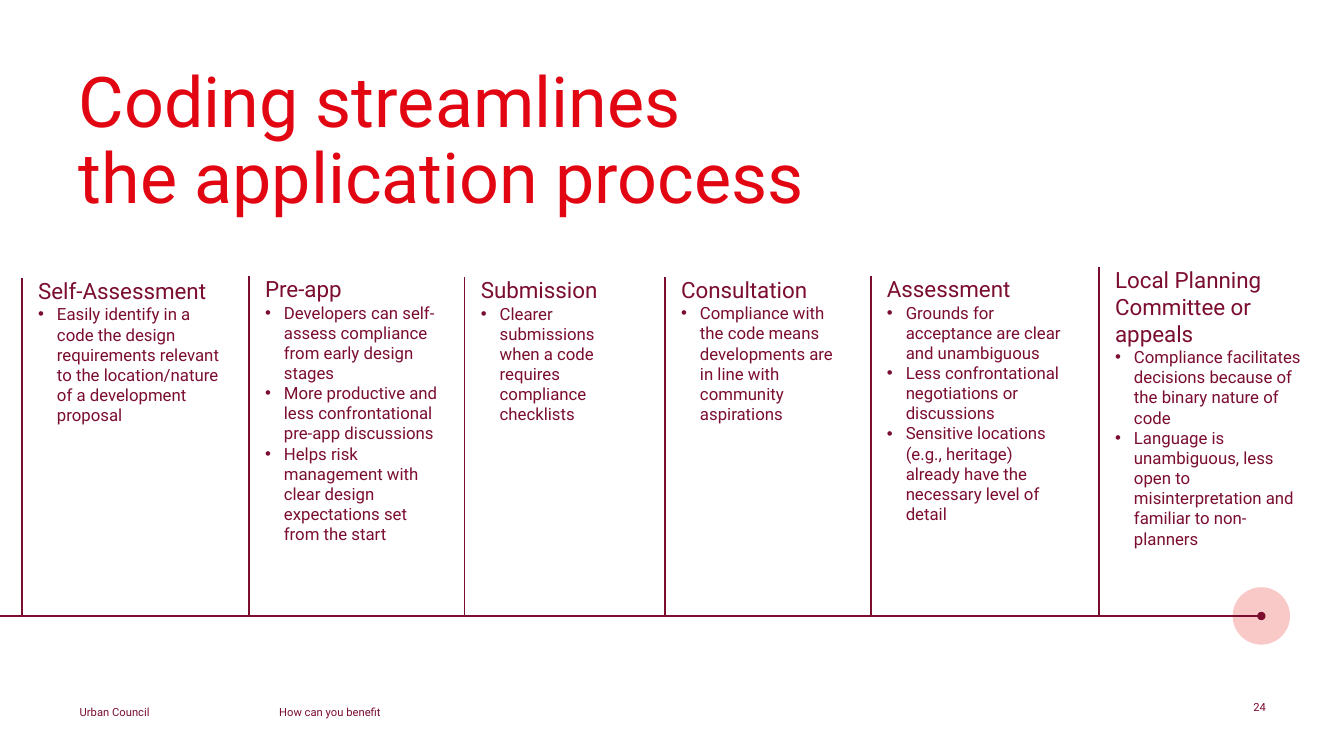
from lxml import etree
from pptx import Presentation
from pptx.dml.color import RGBColor
from pptx.enum.shapes import MSO_CONNECTOR, MSO_SHAPE
from pptx.enum.text import MSO_ANCHOR, PP_ALIGN
from pptx.oxml.ns import qn
from pptx.util import Pt

STRAIGHT = MSO_CONNECTOR.STRAIGHT
OVAL = MSO_SHAPE.OVAL
TOP = MSO_ANCHOR.TOP
LEFT, RIGHT = PP_ALIGN.LEFT, PP_ALIGN.RIGHT

COLORS = {"title": "E20512", "wine": "7B0D2F", "halo": "F8C9C7"}
TIMELINE_Y = 440
RULE_GAP = 2.9

STAGES = [
    (18.7, 198, 147.6, "Self-Assessment", [
        "Easily identify in a code the design requirements relevant to the "
        "location/nature of a development proposal"]),
    (180.8, 196.7, 140.4, "Pre-app", [
        "Developers can self-assess compliance from early design stages",
        "More productive and less confrontational pre-app discussions",
        "Helps risk management with clear design expectations set from the start"]),
    (334.9, 197.5, 128.9, "Submission", [
        "Clearer submissions when a code requires compliance checklists"]),
    (478, 197.2, 133.2, "Consultation", [
        "Compliance with the code means developments are in line with "
        "community aspirations"]),
    (625, 196.7, 148.3, "Assessment", [
        "Grounds for acceptance are clear and unambiguous",
        "Less confrontational negotiations or discussions",
        "Sensitive locations (e.g., heritage) already have the necessary "
        "level of detail"]),
    (788, 190.2, 149.8, "Local Planning Committee or appeals", [
        "Compliance facilitates decisions because of the binary nature of code",
        "Language is unambiguous, less open to misinterpretation and familiar "
        "to non-planners"]),
]


class SlideBuilder:
    """Draws styled elements on one page, with lengths in points."""

    def __init__(self, page, font):
        self.page = page
        self.font = font

    def style(self, para, size, color):
        para.font.name = self.font
        para.font.size = Pt(size)
        para.font.color.rgb = RGBColor.from_string(COLORS[color])

    def frame(self, left, top, width, height, inset=0):
        box = self.page.shapes.add_textbox(Pt(left), Pt(top), Pt(width), Pt(height))
        frame = box.text_frame
        frame.word_wrap = True
        frame.vertical_anchor = TOP
        frame.margin_left = frame.margin_right = Pt(inset)
        frame.margin_top = frame.margin_bottom = 0
        return frame

    def label(self, left, top, width, height, text, size=8, color="wine",
              align=LEFT, spacing=1.0):
        para = self.frame(left, top, width, height).paragraphs[0]
        para.text = text
        para.alignment = align
        para.line_spacing = spacing
        self.style(para, size, color)

    def bullet(self, para):
        properties = para._p.get_or_add_pPr()
        properties.set("marL", str(Pt(13.5)))
        properties.set("indent", str(Pt(-13.5)))
        font = etree.Element(qn("a:buFont"), typeface="Arial")
        mark = etree.Element(qn("a:buChar"), char="•")
        properties.insert(0, font)
        properties.insert(1, mark)

    def line(self, start_x, start_y, end_x, end_y, tail=None):
        line = self.page.shapes.add_connector(
            STRAIGHT, Pt(start_x), Pt(start_y), Pt(end_x), Pt(end_y))
        line.line.color.rgb = RGBColor.from_string(COLORS["wine"])
        line.line.width = Pt(1)
        properties = line._element.spPr
        if tail:
            etree.SubElement(properties.find(qn("a:ln")), qn("a:tailEnd"), type=tail)
        etree.SubElement(properties, qn("a:effectLst"))

    def circle(self, left, top, diameter, color):
        circle = self.page.shapes.add_shape(
            OVAL, Pt(left), Pt(top), Pt(diameter), Pt(diameter))
        circle.shadow.inherit = False
        circle.fill.solid()
        circle.fill.fore_color.rgb = RGBColor.from_string(COLORS[color])
        circle.line.fill.background()

    def stage(self, left, top, width, heading, points):
        rule_x = left - RULE_GAP
        self.line(rule_x, TIMELINE_Y, rule_x, top + 0.5)
        frame = self.frame(left, top, width, 220, inset=8.5)
        frame.paragraphs[0].text = heading
        self.style(frame.paragraphs[0], 16, "wine")
        for point in points:
            para = frame.add_paragraph()
            para.text = point
            self.style(para, 12, "wine")
            self.bullet(para)


def main():
    deck = Presentation()
    deck.slide_width, deck.slide_height = Pt(960), Pt(540)
    page = deck.slides.add_slide(deck.slide_layouts[6])
    builder = SlideBuilder(page, "Roboto")

    builder.label(56.2, 48.2, 848, 91.4, "Coding streamlines\vthe application process",
                  size=50, color="title", spacing=0.9)
    builder.circle(880.5, 419.5, 41, "halo")
    builder.line(-3, TIMELINE_Y, 901, TIMELINE_Y, tail="oval")
    for stage in STAGES:
        builder.stage(*stage)

    builder.label(56.9, 504, 129, 11.5, "Urban Council")
    builder.label(199.4, 504, 273.6, 11.5, "How can you benefit")
    builder.label(774.7, 500.4, 129.6, 11.5, "24", align=RIGHT)
    deck.save("out.pptx")


if __name__ == "__main__":
    main()
